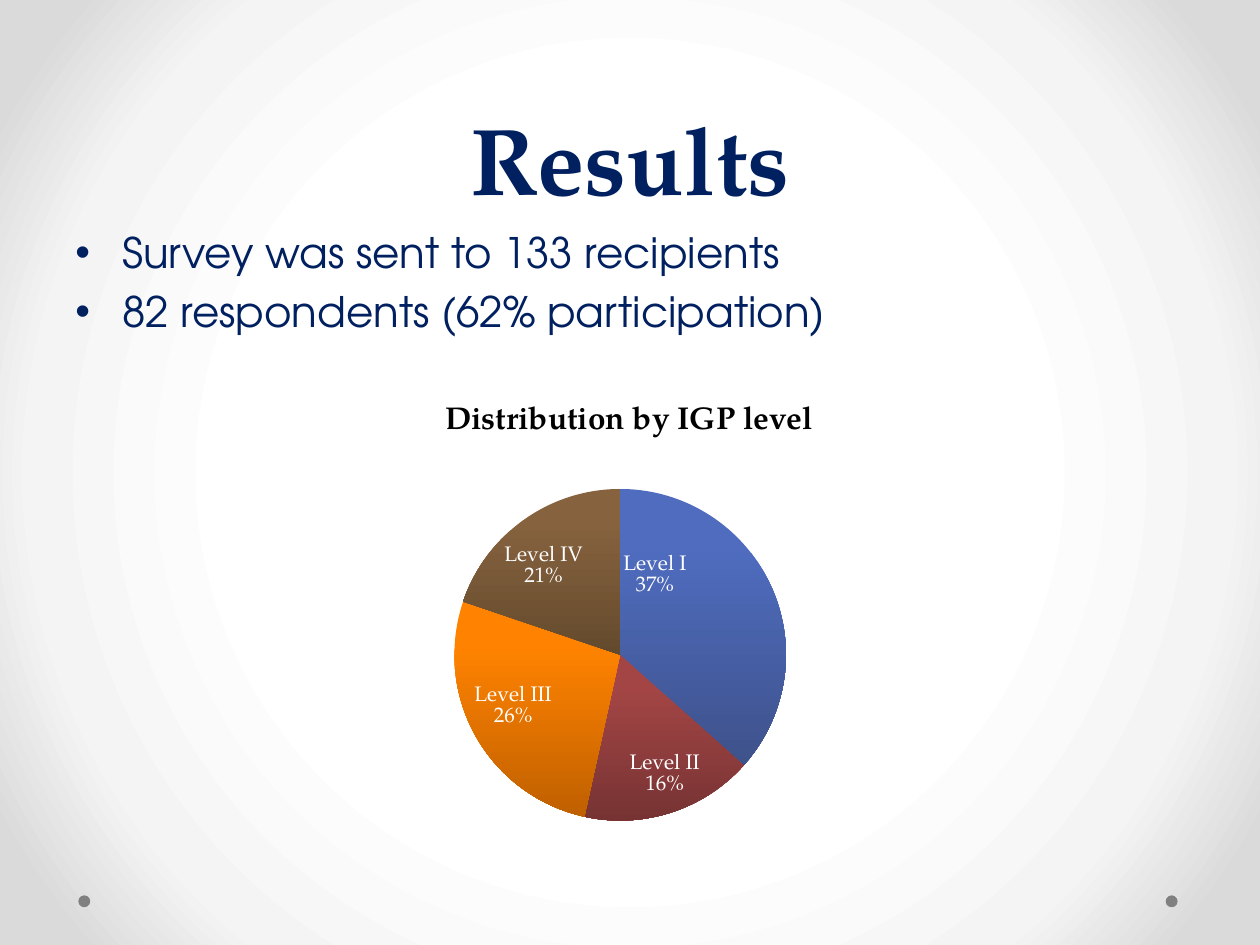
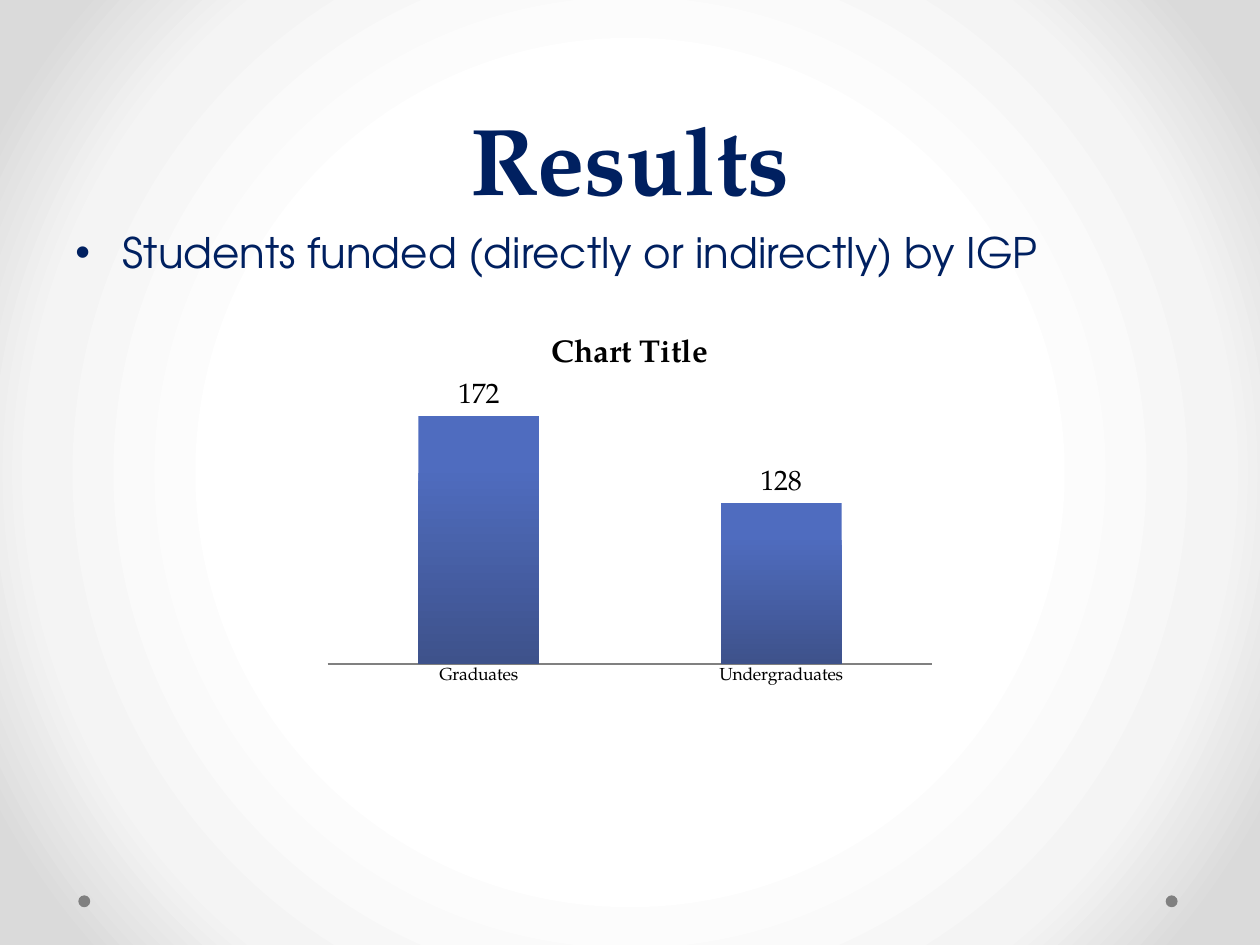
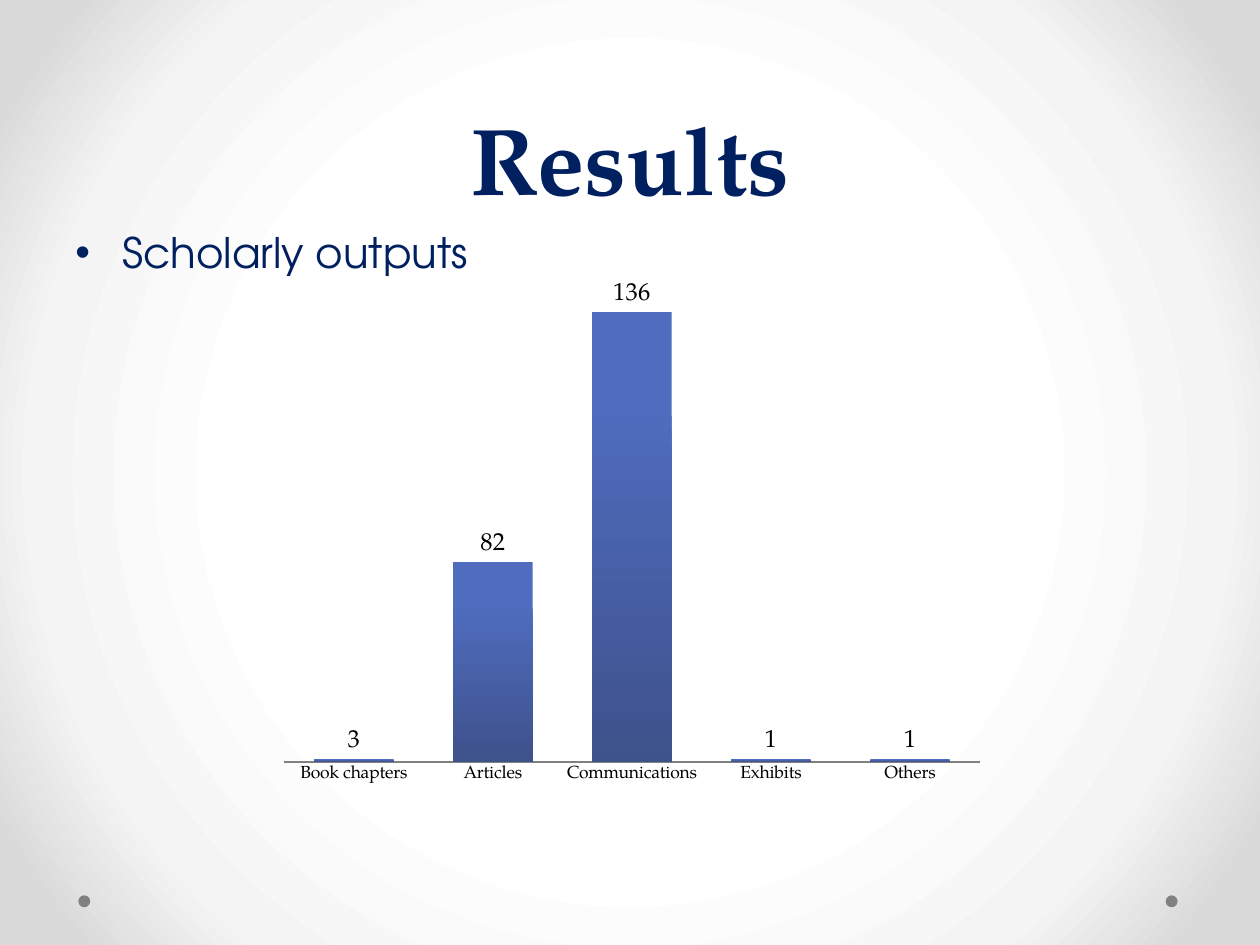
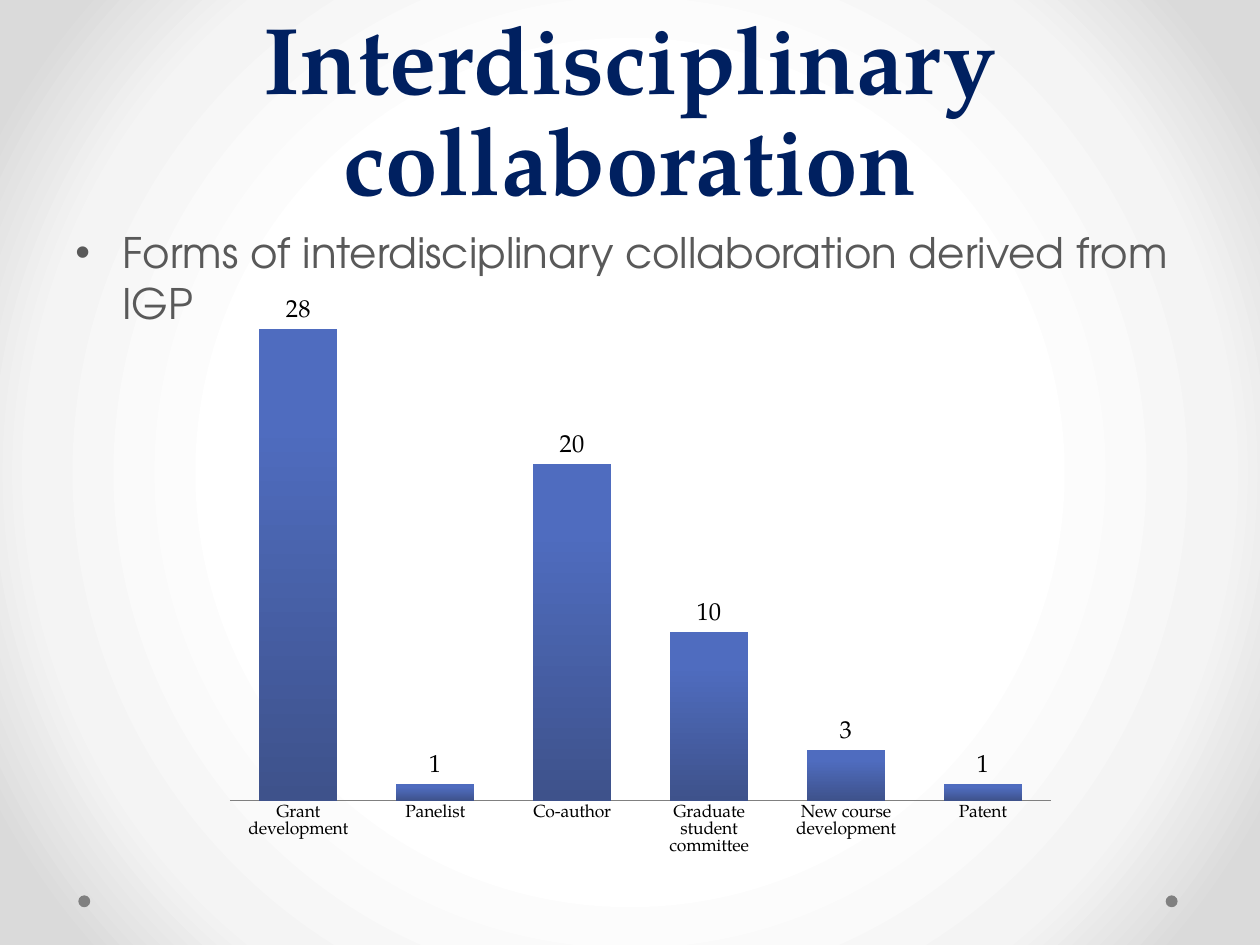
from lxml import etree
from pptx import Presentation
from pptx import util as u
from pptx.chart import data as chart_data
from pptx.dml.color import RGBColor
from pptx.enum import chart as ch, shapes as sh, text as tx
from pptx.oxml import parse_xml
from pptx.oxml.ns import nsdecls, qn

HEADING_FONT = "TeX Gyre Pagella"
BODY_FONT = "TeX Gyre Adventor"
COLORS = {"navy": "002060", "gray": "595959", "dot": "808080",
          "black": "000000", "white": "FFFFFF"}
BACKGROUND_STOPS = [(50, "FFFFFF"), (76, "F4F4F4"), (92, "DADADA")]

# Upper and lower colour of each chart fill
BLUE = ("4F6CBF", "3E528B")
PIE_FILLS = [BLUE, ("A34545", "773333"), ("FF8300", "C06000"), ("86623E", "644A2D")]
# Shift of each pie label from the inside end of its slice, as chart fractions
PIE_LABEL_SHIFTS = [(-0.1, -0.07), (0.04, -0.02), (-0.01, -0.01), (-0.03, 0.04)]

# Content: "box" is left, top, width, height in cm; "plot" is x, y, w, h as chart fractions
SLIDES = [
    {"title": "Results", "color": "navy", "body_height": 2.7,
     "bullets": ["Survey was sent to 133 recipients", "82 respondents (62% participation)"],
     "chart": {"kind": "pie", "box": (4.8, 7.67, 15.77, 10.13),
               "plot": (0.276, 0.216, 0.425, 0.66), "title": "Distribution by IGP level",
               "categories": ["Level I", "Level II", "Level III", "Level IV"],
               "values": [37, 17, 27, 20], "label_size": 12,
               "labels": ["Level I\n37%", "Level II\n16%", "Level III\n26%", "Level IV\n21%"]}},
    {"title": "Results", "color": "navy", "body_height": 2.26,
     "bullets": ["Students funded (directly or indirectly) by IGP"],
     "chart": {"kind": "column", "box": (6.35, 6.38, 12.7, 7.62),
               "plot": (0.02, 0.185, 0.96, 0.735), "title": "Chart Title",
               "categories": ["Graduates", "Undergraduates"], "values": [125, 81],
               "labels": ["172", "128"], "label_size": 16, "gap": 150, "overlap": -25,
               "maximum": 140}},
    {"title": "Results", "color": "navy", "body_height": 12.57,
     "bullets": ["Scholarly outputs"],
     "chart": {"kind": "column", "box": (5.44, 5.54, 14.6, 10.46),
               "plot": (0.02, 0.02, 0.96, 0.919),
               "categories": ["Book chapters", "Articles", "Communications", "Exhibits", "Others"],
               "values": [1, 67, 151, 1, 1], "labels": ["3", "82", "136"],
               "label_size": 14, "gap": 75, "maximum": 160}},
    {"title": "Interdisciplinary collaboration", "color": "gray", "body_height": 2.9,
     "bullets": ["Forms of interdisciplinary collaboration derived from IGP"],
     "chart": {"kind": "column", "box": (4.29, 5.72, 17.25, 11.81),
               "plot": (0.02, 0.02, 0.96, 0.863),
               "categories": ["Grant development", "Panelist", "Co-author",
                              "Graduate student committee", "New course development", "Patent"],
               "values": [28, 1, 20, 10, 3, 1], "label_size": 14, "gap": 75, "maximum": 30}},
]


def rgb(name):
    return RGBColor.from_string(COLORS.get(name, name))


def style_font(font, size, color, name=HEADING_FONT, bold=False):
    font.name, font.size, font.bold = name, u.Pt(size), bold
    font.color.rgb = rgb(color)


def place(shape, left, top, width, height):
    shape.left, shape.top = u.Cm(left), u.Cm(top)
    shape.width, shape.height = u.Cm(width), u.Cm(height)


# Shared look
def set_background(master):
    master.background.fill.solid()
    solid = next(master.element.iter(qn("a:solidFill")))
    stops = "".join(f'<a:gs pos="{position * 1000}"><a:srgbClr val="{color}"/></a:gs>'
                    for position, color in BACKGROUND_STOPS)
    gradient = parse_xml(
        f'<a:gradFill {nsdecls("a")} rotWithShape="1"><a:gsLst>{stops}</a:gsLst>'
        '<a:path path="circle"><a:fillToRect l="50000" t="50000" r="50000" b="50000"/>'
        '</a:path></a:gradFill>')
    solid.getparent().replace(solid, gradient)


def add_layout_dots(layout, slide):
    """Draw the corner dots and hand them to the layout, which all slides share."""
    for left in (1.58, 23.5):
        dot = slide.shapes.add_shape(sh.MSO_SHAPE.OVAL, u.Cm(left), u.Cm(18.05),
                                     u.Cm(0.24), u.Cm(0.24))
        dot.shadow.inherit = False
        dot.fill.solid()
        dot.fill.fore_color.rgb = rgb("dot")
        dot.line.fill.background()
        layout.shapes.element.append(dot.element)


def add_title(slide, title):
    shape = slide.shapes.title
    place(shape, 1.27, 0, 22.86, 4.45)
    frame = shape.text_frame
    frame.text = title
    frame.auto_size = tx.MSO_AUTO_SIZE.NONE
    frame.vertical_anchor = tx.MSO_ANCHOR.BOTTOM
    paragraph = frame.paragraphs[0]
    paragraph.alignment = tx.PP_ALIGN.CENTER
    paragraph.line_spacing = u.Pt(58)
    style_font(paragraph.runs[0].font, 54, "navy", bold=True)


def add_bullets(slide, bullets, height, color):
    box = slide.shapes.add_textbox(u.Cm(1.27), u.Cm(4.45), u.Cm(22.86), u.Cm(height))
    frame = box.text_frame
    frame.word_wrap = True
    frame.text = "\n".join(bullets)
    for paragraph in frame.paragraphs:
        paragraph.space_before = u.Pt(4.8)
        style_font(paragraph.runs[0].font, 24, color, BODY_FONT)
        properties = paragraph._p.get_or_add_pPr()
        properties.set("marL", str(u.Cm(0.95)))
        properties.set("indent", str(-u.Cm(0.95)))
        etree.SubElement(properties, qn("a:buFont")).set("typeface", "Arial")
        etree.SubElement(properties, qn("a:buChar")).set("char", "•")


# Charts
def manual_layout(modes, **fractions):
    parts = [("layoutTarget", "inner")] if "w" in fractions else []
    parts += [(mode, "edge") for mode in modes] + list(fractions.items())
    body = "".join(f'<c:{tag} val="{value}"/>' for tag, value in parts)
    return parse_xml(f'<c:layout {nsdecls("c")}><c:manualLayout>{body}</c:manualLayout></c:layout>')


def set_plot_area(chart, x, y, w, h):
    area = chart.element.find(".//" + qn("c:plotArea"))
    previous = area.find(qn("c:layout"))
    if previous is not None:
        area.remove(previous)
    area.insert(0, manual_layout(("xMode", "yMode"), x=x, y=y, w=w, h=h))


def fill_gradient(fill, colors):
    fill.gradient()
    fill.gradient_angle = 270
    for stop, position, color in zip(fill.gradient_stops, (0.2, 1), colors):
        stop.position = position
        stop.color.rgb = rgb(color)


def add_labels(series, content, color, position):
    """Label the series, then reword the points that have their own wording."""
    labels = series.data_labels
    is_pie = content["kind"] == "pie"
    labels.show_value = not is_pie
    labels.show_percentage = labels.show_category_name = is_pie
    labels.position = position
    style_font(labels.font, content["label_size"], color)
    for index, wording in enumerate(content.get("labels", [])):
        label = series.points[index].data_label
        label.text_frame.text = wording
        label.position = position
        for paragraph in label.text_frame.paragraphs:
            style_font(paragraph.runs[0].font, content["label_size"], color)


def format_pie(chart, content):
    plot = chart.plots[0]
    plot.vary_by_categories = True
    series = plot.series[0]
    for index, colors in enumerate(PIE_FILLS):
        fill_gradient(series.points[index].format.fill, colors)
    add_labels(series, content, "white", ch.XL_LABEL_POSITION.INSIDE_END)
    for label, (x, y) in zip(chart.element.iter(qn("c:dLbl")), PIE_LABEL_SHIFTS):
        label.insert(1, manual_layout((), x=x, y=y))


def format_columns(chart, content):
    plot = chart.plots[0]
    plot.vary_by_categories = False
    plot.gap_width = content["gap"]
    plot.overlap = content.get("overlap", 0)
    fill_gradient(plot.series[0].format.fill, BLUE)
    add_labels(plot.series[0], content, "black", ch.XL_LABEL_POSITION.OUTSIDE_END)
    values, categories = chart.value_axis, chart.category_axis
    values.minimum_scale, values.maximum_scale = 0, content["maximum"]
    values.has_major_gridlines = False
    values.visible = False
    categories.major_tick_mark = ch.XL_TICK_MARK.NONE
    categories.format.line.color.rgb = rgb("dot")
    style_font(categories.tick_labels.font, 10, "black")


CHART_KINDS = {"pie": (ch.XL_CHART_TYPE.PIE, format_pie),
               "column": (ch.XL_CHART_TYPE.COLUMN_CLUSTERED, format_columns)}


def add_chart(slide, content):
    chart_type, format_kind = CHART_KINDS[content["kind"]]
    data = chart_data.CategoryChartData()
    data.categories = content["categories"]
    data.add_series("Series 1", content["values"])
    box = [u.Cm(length) for length in content["box"]]
    chart = slide.shapes.add_chart(chart_type, *box, data).chart
    style_font(chart.font, 10, "black")
    chart.has_legend = False
    chart.has_title = "title" in content
    if chart.has_title:
        frame = chart.chart_title.text_frame
        frame.text = content["title"]
        style_font(frame.paragraphs[0].runs[0].font, 18, "black", bold=True)
        chart.chart_title.include_in_layout = False
    format_kind(chart, content)
    set_plot_area(chart, *content["plot"])


def main():
    presentation = Presentation()
    presentation.slide_width, presentation.slide_height = u.Cm(25.4), u.Cm(19.05)
    set_background(presentation.slide_master)
    layout = presentation.slide_layouts.get_by_name("Title Only")
    for number, content in enumerate(SLIDES):
        slide = presentation.slides.add_slide(layout)
        if number == 0:
            add_layout_dots(layout, slide)
        add_title(slide, content["title"])
        add_bullets(slide, content["bullets"], content["body_height"], content["color"])
        add_chart(slide, content["chart"])
    presentation.save("out.pptx")


if __name__ == "__main__":
    main()
